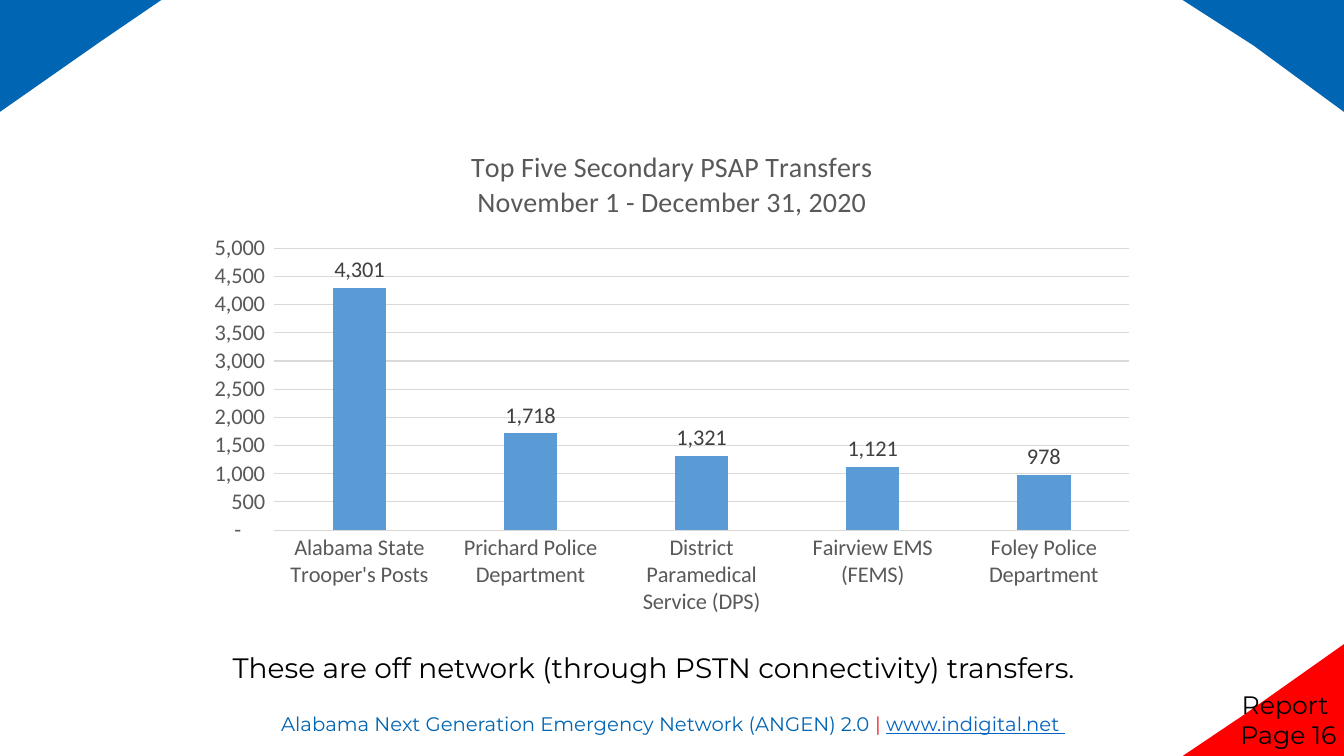
from pptx import Presentation
from pptx import util as u
from pptx.chart.data import CategoryChartData
from pptx.dml.color import RGBColor
from pptx.enum import chart as ch, text

COLORS = {
    "blue": "0065B3", "red": "FF0000", "divider": "ED1E24", "link": "0563C1",
    "black": "000000", "bar": "5B9BD5", "grid": "D9D9D9",
    "axis": "595959", "label": "404040",
}
SLIDE_W, SLIDE_H = 13.33, 7.5
CORNER_W, CORNER_H = 1.6, 1.11
TRANSFERS = {
    "Alabama State Trooper's Posts": 4301,
    "Prichard Police Department": 1718,
    "District Paramedical Service (DPS)": 1321,
    "Fairview EMS (FEMS)": 1121,
    "Foley Police Department": 978,
}


def rgb(name):
    return RGBColor.from_string(COLORS[name])


def style_font(font, size, color, name):
    font.size = u.Pt(size)
    font.name = name
    font.bold = False
    font.color.rgb = rgb(color)


def add_corner(s, x, y, points, color):
    """Fill the outline of points, given in inches from (x, y)."""
    outline = [(u.Inches(x + dx), u.Inches(y + dy)) for dx, dy in points]
    builder = s.shapes.build_freeform(*outline[0])
    builder.add_line_segments(outline[1:], close=True)
    sp = builder.convert_to_shape()
    sp.shadow.inherit = False
    sp.fill.solid()
    sp.fill.fore_color.rgb = rgb(color)
    sp.line.fill.background()


def add_corners(s):
    w, h = CORNER_W, CORNER_H
    right, bottom = SLIDE_W - w, SLIDE_H - h
    add_corner(s, right, 0, [(0, 0), (w, 0), (w, h), (0.7, 0.45)], "blue")
    add_corner(s, 0, 0, [(0, 0), (w, 0), (1, 0.41), (0, h)], "blue")
    add_corner(s, right, bottom, [(w, h), (0, h), (0.61, 0.7), (w, 0)], "red")


def add_text(s, box, paragraphs, size, align):
    """Each paragraph is a list of (words, color, underline) runs."""
    tf = s.shapes.add_textbox(*map(u.Inches, box)).text_frame
    tf.word_wrap = True
    for i, runs in enumerate(paragraphs):
        p = tf.paragraphs[0] if i == 0 else tf.add_paragraph()
        p.alignment = align
        for words, color, underline in runs:
            r = p.add_run()
            r.text = words
            style_font(r.font, size, color, "Montserrat")
            if underline:
                r.font.underline = True
    return tf


def add_footer(s, box):
    add_text(s, box, [[
        ("Alabama Next Generation Emergency Network (ANGEN) 2.0 ", "blue", False),
        ("| ", "divider", False),
        ("www.indigital.net ", "link", True),
    ]], 14, text.PP_ALIGN.JUSTIFY)


def add_page_label(s, box):
    lines = [[(words, "black", False)] for words in ("Report ", "Page 16")]
    add_text(s, box, lines, 18, text.PP_ALIGN.CENTER)


def add_note(s, box):
    words = "These are off network (through PSTN connectivity) transfers."
    tf = add_text(s, box, [[(words, "black", False)]], 20, text.PP_ALIGN.CENTER)
    tf.paragraphs[0].line_spacing = 1.15
    tf.paragraphs[0].space_after = u.Pt(10)


def style_axis(axis):
    axis.major_tick_mark = axis.minor_tick_mark = ch.XL_TICK_MARK.NONE
    style_font(axis.tick_labels.font, 16, "axis", "Calibri")


def style_line(line):
    line.color.rgb = rgb("grid")
    line.width = u.Pt(0.75)


def add_transfer_chart(s, box):
    data = CategoryChartData(number_format="#,##0")
    data.categories = list(TRANSFERS)
    data.add_series("Series 1", list(TRANSFERS.values()))
    chart = s.shapes.add_chart(
        ch.XL_CHART_TYPE.COLUMN_CLUSTERED, *map(u.Inches, box), data).chart
    style_font(chart.font, 16, "black", "Calibri")
    chart.has_legend = False

    tf = chart.chart_title.text_frame
    tf.text = "Top Five Secondary PSAP Transfers\nNovember 1 - December 31, 2020"
    for p in tf.paragraphs:
        for r in p.runs:
            style_font(r.font, 20, "axis", "Calibri")

    style_axis(chart.category_axis)
    style_line(chart.category_axis.format.line)
    values = chart.value_axis
    style_axis(values)
    values.minimum_scale, values.maximum_scale, values.major_unit = 0, 5000, 500
    values.format.line.fill.background()
    style_line(values.major_gridlines.format.line)
    values.tick_labels.number_format = '#,##0_);(#,##0);"-"??_)'
    values.tick_labels.number_format_is_linked = False

    plot = chart.plots[0]
    plot.vary_by_categories = False
    plot.gap_width, plot.overlap = 219, -27
    fill = plot.series[0].format.fill
    fill.solid()
    fill.fore_color.rgb = rgb("bar")
    labels = plot.series[0].data_labels
    labels.show_value = True
    labels.position = ch.XL_LABEL_POSITION.OUTSIDE_END
    labels.number_format = "#,##0"
    labels.number_format_is_linked = False
    style_font(labels.font, 16, "label", "Calibri")


def main():
    prs = Presentation()
    prs.slide_width, prs.slide_height = u.Inches(SLIDE_W), u.Inches(SLIDE_H)
    s = prs.slides.add_slide(prs.slide_layouts[6])
    add_corners(s)
    add_footer(s, (2.69, 7.01, 9.44, 0.34))
    add_page_label(s, (11.5, 6.79, 2.56, 0.71))
    add_note(s, (0.58, 6.35, 11.81, 0.44))
    add_transfer_chart(s, (1.94, 1.29, 9.45, 4.92))
    prs.save("out.pptx")


if __name__ == "__main__":
    main()
